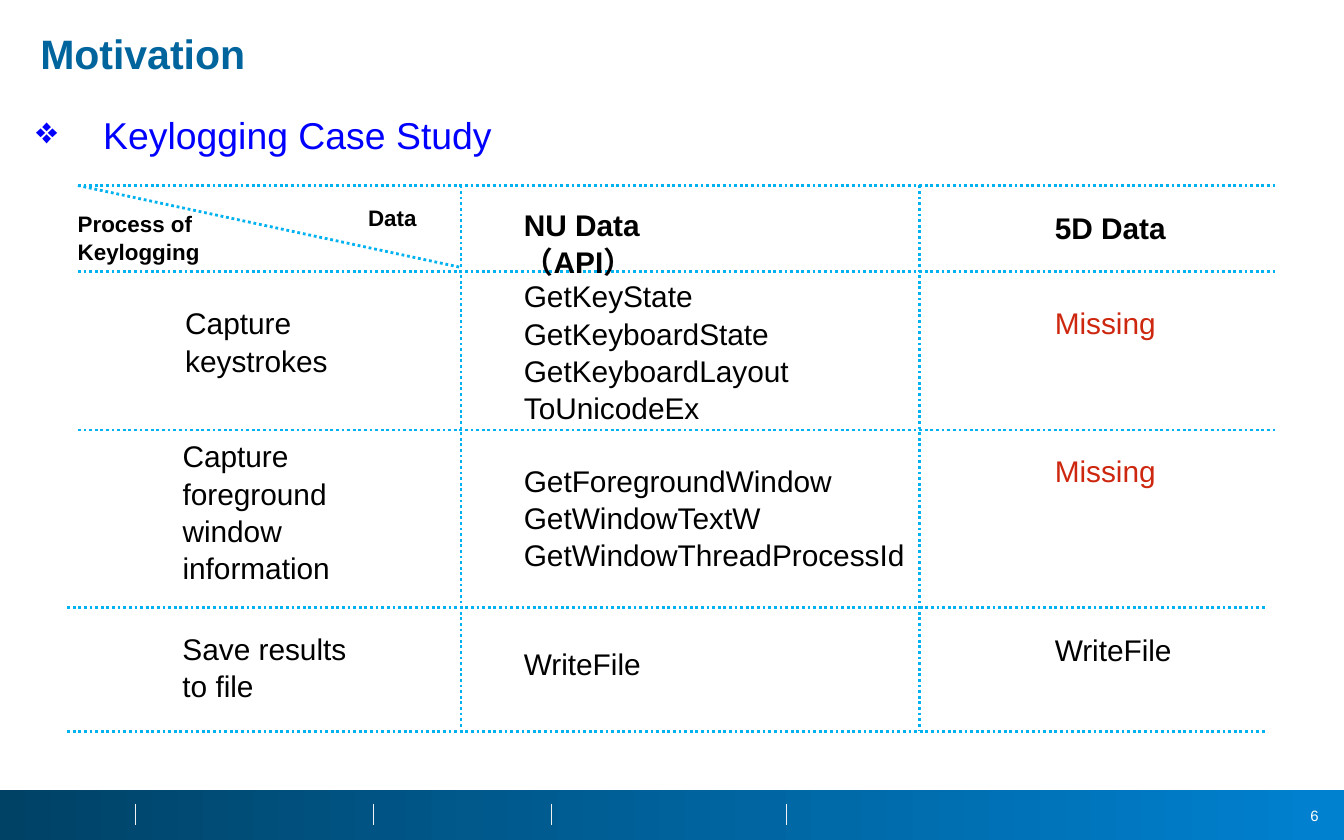
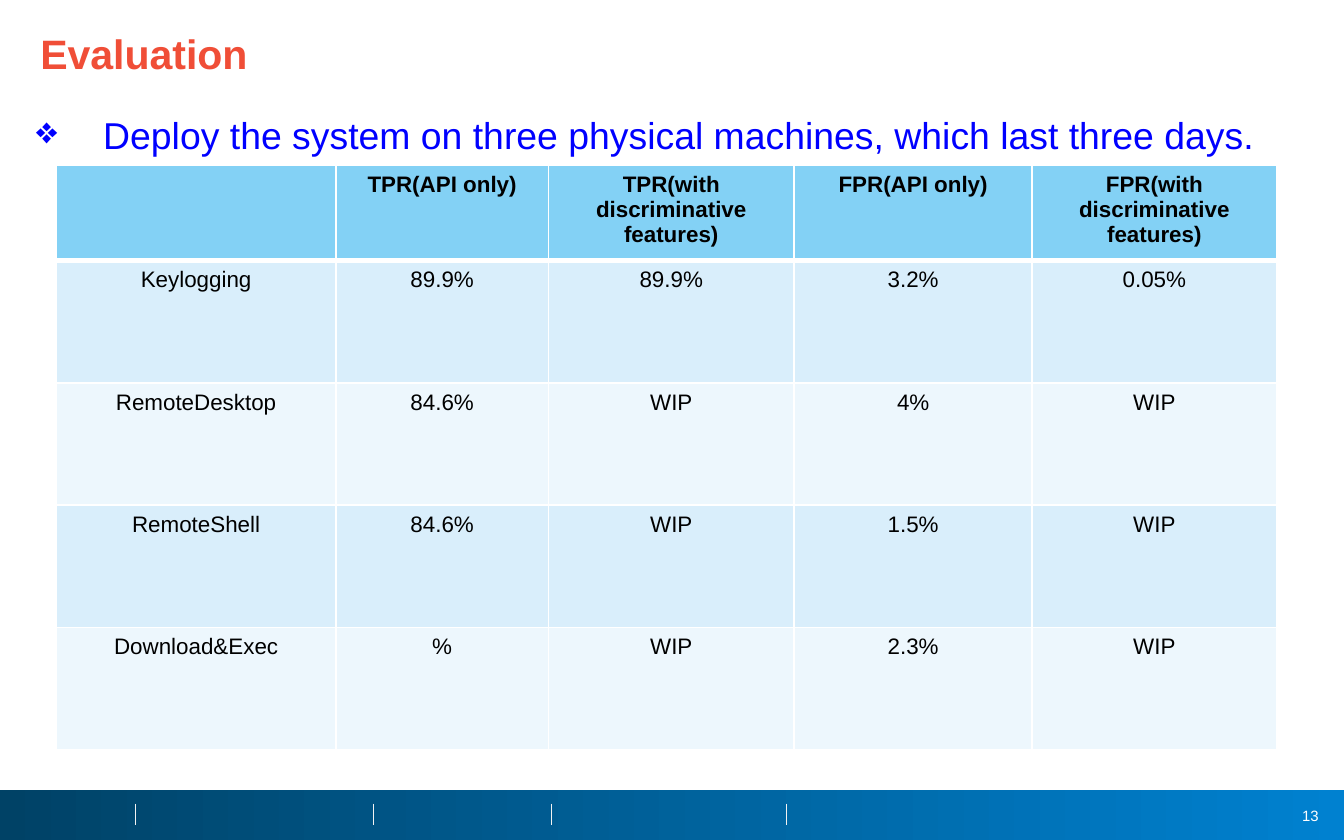
"""Builds the keylogging motivation and evaluation slides."""
import pptx
import pptx.chart.data
import pptx.dml.color
import pptx.enum.dml
import pptx.enum.shapes
import pptx.enum.text
import pptx.oxml
import pptx.oxml.ns
import pptx.util
from lxml import etree

Inches = pptx.util.Inches
Pt = pptx.util.Pt
RGBColor = pptx.dml.color.RGBColor
ALIGN = pptx.enum.text.PP_ALIGN
ANCHOR = pptx.enum.text.MSO_ANCHOR
AUTO_SIZE = pptx.enum.text.MSO_AUTO_SIZE
TITLE_ONLY = 5

BLACK = RGBColor(0x00, 0x00, 0x00)
WHITE = RGBColor(0xFF, 0xFF, 0xFF)
NAVY = RGBColor(0x00, 0x42, 0x66)
AZURE = RGBColor(0x00, 0x81, 0xD0)
PALE_GREY = RGBColor(0xF2, 0xF2, 0xF2)
TITLE_BLUE = RGBColor(0x00, 0x64, 0x9D)
TITLE_ORANGE = RGBColor(0xF0, 0x4E, 0x37)
HEADING_BLUE = RGBColor(0x00, 0x00, 0xFF)
GRID_CYAN = RGBColor(0x00, 0xB2, 0xEF)
MISSING_RED = RGBColor(0xCE, 0x27, 0x0F)
HEADER_FILL = RGBColor(0x83, 0xD1, 0xF5)
BAND_FILLS = (RGBColor(0xD9, 0xEE, 0xFB), RGBColor(0xED, 0xF7, 0xFD))

MOTIVATION = {"title": "Motivation", "colour": TITLE_BLUE, "number": 6,
              "heading": "Keylogging Case Study"}
EVALUATION = {"title": "Evaluation", "colour": TITLE_ORANGE, "number": 13,
              "heading": "Deploy the system on three physical machines, which last three days."}

FOOTER_DIVIDERS = (1.01, 2.78, 4.1, 5.85)

GRID_ROWS = ((1.38, 0.58), (2.02, 0.58), (3.2, 0.58), (4.52, 0.5), (5.44, 0.5))
GRID_WIDTH = 8.92
GRID_COLUMNS = (3.43, 6.84)
GRID_TOP, GRID_BOTTOM = GRID_ROWS[0][0], GRID_ROWS[-1][0]
CORNER_LINE = (0.58, GRID_TOP, 3.43, 1.99)

PLAIN = {"size": Pt(16), "bold": False}
COLUMN_HEAD = {"size": Pt(16), "bold": True}
CORNER_HEAD = {"size": Pt(12), "bold": True}
CASE_LABELS = (
    ((0.48, 1.51, 1.42, 0.5), ("Process of", "Keylogging"), CORNER_HEAD, BLACK),
    ((2.64, 1.46, 1.42, 0.3), ("Data",), CORNER_HEAD, BLACK),
    ((3.8, 1.48, 1.67, 0.37), ("NU Data（API）",), COLUMN_HEAD, BLACK),
    ((7.75, 1.5, 1.1, 0.37), ("5D Data",), COLUMN_HEAD, BLACK),
    ((1.28, 2.21, 1.31, 0.64), ("Capture", "keystrokes"), PLAIN, BLACK),
    ((1.26, 3.2, 1.35, 1.18), ("Capture", "foreground", "window", "information"), PLAIN, BLACK),
    ((1.26, 4.63, 1.5, 0.64), ("Save results", "to file"), PLAIN, BLACK),
    ((7.75, 2.21, 1.1, 0.37), ("Missing",), PLAIN, MISSING_RED),
    ((7.75, 3.31, 1.1, 0.37), ("Missing",), PLAIN, MISSING_RED),
    ((7.75, 4.64, 1.1, 0.37), ("WriteFile",), PLAIN, BLACK),
)
API_AREA = (3.43, 2.01, 3.6, 3.06)
API_INDENT = 0.37
API_GROUPS = (
    (0, ("GetKeyState", "GetKeyboardState", "GetKeyboardLayout", "ToUnicodeEx")),
    (19, ("GetForegroundWindow", "GetWindowTextW", "GetWindowThreadProcessId")),
    (38, ("WriteFile",)),
)
LABEL_SPACING = 1.04

RATES_AREA = (0.42, 1.23, 9.08, 4.35)
RATES_COLUMNS = (2.08, 1.58, 1.83, 1.77, 1.82)
RATES_ROWS = (0.71, 0.91, 0.91, 0.91, 0.91)
RATES = (
    ("", "TPR(API only)", "TPR(with discriminative features)",
     "FPR(API only)", "FPR(with discriminative features)"),
    ("Keylogging", "89.9%", "89.9%", "3.2%", "0.05%"),
    ("RemoteDesktop", "84.6%", "WIP", "4%", "WIP"),
    ("RemoteShell", "84.6%", "WIP", "1.5%", "WIP"),
    ("Download&Exec", "%", "WIP", "2.3%", "WIP"),
)


def inches(lengths):
    return [Inches(length) for length in lengths]


def set_format(target, values):
    for attribute, value in values.items():
        setattr(target, attribute, value)


def set_font(paragraph, values, colour):
    set_format(paragraph.font, {"name": "Arial", **values})
    paragraph.font.color.rgb = colour


def add_text(slide, area, lines, font, colour, spacing=None, **frame_format):
    frame = slide.shapes.add_textbox(*inches(area)).text_frame
    set_format(frame, {"word_wrap": True, "auto_size": AUTO_SIZE.SHAPE_TO_FIT_TEXT, **frame_format})
    frame.text = "\n".join(lines)
    for paragraph in frame.paragraphs:
        if spacing:
            paragraph.line_spacing = spacing
        set_font(paragraph, font, colour)
    return frame.paragraphs


def add_line(slide, ends, colour, width, dash=None):
    line = slide.shapes.add_connector(pptx.enum.shapes.MSO_CONNECTOR.STRAIGHT, *inches(ends))
    line.line.color.rgb = colour
    line.line.width = Pt(width)
    if dash:
        line.line.dash_style = dash
    etree.SubElement(line._element.spPr, pptx.oxml.ns.qn("a:effectLst"))


def add_footer(slide, number):
    band = slide.shapes.add_shape(pptx.enum.shapes.MSO_SHAPE.RECTANGLE, *inches((0, 5.88, 10, 0.37)))
    band.shadow.inherit = False
    band.line.fill.background()
    band.fill.gradient()
    band.fill.gradient_angle = 0
    for stop, colour in zip(band.fill.gradient_stops, (NAVY, AZURE)):
        stop.color.rgb = colour
    for x in FOOTER_DIVIDERS:
        add_line(slide, (x, 5.98, x, 6.14), PALE_GREY, 0.25)
    page = add_text(slide, (9.49, 5.95, 0.42, 0.24), (str(number),), {"size": Pt(8)}, WHITE,
                    vertical_anchor=ANCHOR.MIDDLE)
    page[0].alignment = ALIGN.RIGHT


def add_title(slide, text, colour):
    title = slide.shapes.title
    set_format(title, dict(zip(("left", "top", "width", "height"), inches((0.2, 0.2, 9.59, 0.36)))))
    set_format(title.text_frame, {"text": text, "vertical_anchor": ANCHOR.TOP,
                                  "auto_size": AUTO_SIZE.NONE})
    paragraph = title.text_frame.paragraphs[0]
    set_format(paragraph, {"alignment": ALIGN.LEFT, "line_spacing": 0.9})
    set_font(paragraph, {"size": Pt(22), "bold": True}, colour)


def add_heading(slide, text):
    heading = add_text(slide, (0.17, 0.62, 9.83, 0.54), (text,), {"size": Pt(20)}, HEADING_BLUE, 1.5)[0]
    properties = heading._p.get_or_add_pPr()
    properties.set("marL", str(Inches(0.5)))
    properties.set("indent", str(Inches(-0.5)))
    bullet_colour = etree.Element(pptx.oxml.ns.qn("a:buClr"))
    etree.SubElement(bullet_colour, pptx.oxml.ns.qn("a:srgbClr"), val=str(HEADING_BLUE))
    bullet = etree.Element(pptx.oxml.ns.qn("a:buChar"), char="❖")
    position = 1
    for element in (bullet_colour, bullet):
        properties.insert(position, element)
        position += 1


def add_slide(deck, content):
    slide = deck.slides.add_slide(deck.slide_layouts[TITLE_ONLY])
    add_footer(slide, content["number"])
    add_title(slide, content["title"], content["colour"])
    add_heading(slide, content["heading"])
    return slide


def add_case_study(slide):
    grid = [(left, y, left + GRID_WIDTH, y) for y, left in GRID_ROWS]
    grid += [(x, GRID_TOP, x, GRID_BOTTOM) for x in GRID_COLUMNS]
    for ends in grid + [CORNER_LINE]:
        add_line(slide, ends, GRID_CYAN, 1.5, pptx.enum.dml.MSO_LINE.ROUND_DOT)
    for area, lines, font, colour in CASE_LABELS:
        add_text(slide, area, lines, font, colour, LABEL_SPACING)
    calls = [(call, gap if call == group[0] else 0) for gap, group in API_GROUPS for call in group]
    paragraphs = add_text(slide, API_AREA, [call for call, _ in calls], PLAIN, BLACK, LABEL_SPACING)
    for paragraph, (_, gap) in zip(paragraphs, calls):
        paragraph._p.get_or_add_pPr().set("marL", str(Inches(API_INDENT)))
        if gap:
            paragraph.space_before = Pt(gap)


def add_borders(cell, widths):
    properties = cell._tc.get_or_add_tcPr()
    for position, (side, width) in enumerate(widths.items()):
        border = etree.Element(pptx.oxml.ns.qn(f"a:{side}"), w=str(Pt(width)))
        fill = etree.SubElement(border, pptx.oxml.ns.qn("a:solidFill"))
        etree.SubElement(fill, pptx.oxml.ns.qn("a:srgbClr"), val=str(WHITE))
        properties.insert(position, border)


def add_rates(slide):
    table = slide.shapes.add_table(len(RATES), len(RATES[0]), *inches(RATES_AREA)).table
    for column, width in zip(table.columns, RATES_COLUMNS):
        column.width = Inches(width)
    for row, height in zip(table.rows, RATES_ROWS):
        row.height = Inches(height)
    for r, values in enumerate(RATES):
        header = r == 0
        for c, value in enumerate(values):
            cell = table.cell(r, c)
            cell.text = value
            cell.fill.solid()
            cell.fill.fore_color.rgb = HEADER_FILL if header else BAND_FILLS[(r - 1) % 2]
            add_borders(cell, {"lnL": 1, "lnR": 1, "lnT": 3 if r == 1 else 1, "lnB": 3 if header else 1})
            paragraph = cell.text_frame.paragraphs[0]
            paragraph.alignment = ALIGN.CENTER
            set_font(paragraph, {"size": Pt(12), "bold": header}, BLACK)


def main():
    deck = pptx.Presentation()
    set_format(deck, {"slide_width": Inches(10), "slide_height": Inches(6.25)})
    add_case_study(add_slide(deck, MOTIVATION))
    add_rates(add_slide(deck, EVALUATION))
    deck.save("out.pptx")


if __name__ == "__main__":
    main()
